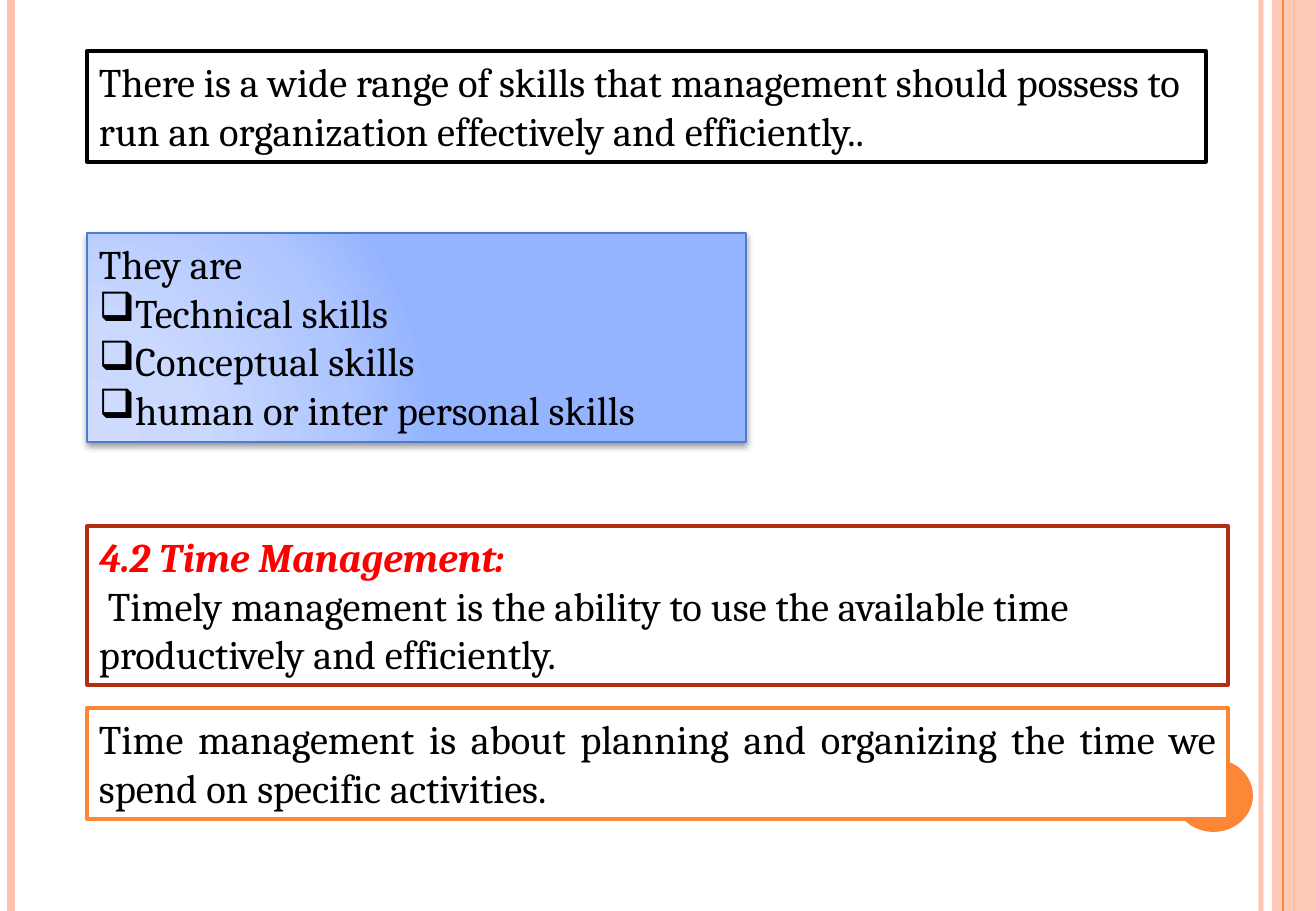
"""Build a slide on management skills and time management."""
from pptx import Presentation
from pptx.dml.color import RGBColor
from pptx.enum.shapes import MSO_CONNECTOR, MSO_SHAPE
from pptx.enum.text import MSO_ANCHOR, PP_ALIGN
from pptx.oxml import parse_xml
from pptx.oxml.ns import qn
from pptx.util import Emu, Pt
from lxml import etree

STRAIGHT = MSO_CONNECTOR.STRAIGHT
RECTANGLE, OVAL = MSO_SHAPE.RECTANGLE, MSO_SHAPE.OVAL
LEFT, JUSTIFY = PP_ALIGN.LEFT, PP_ALIGN.JUSTIFY
TOP = MSO_ANCHOR.TOP

PX = 7526
WIDTH, HEIGHT = 1316, 911
BOX_LEFT = 87
NAMESPACE = 'xmlns:a="http://schemas.openxmlformats.org/drawingml/2006/main"'
BULLET = "❑"
ORANGE, PEACH, BLACK, WHITE = "FE8637", "FEC3AE", "000000", "FFFFFF"

BODY = {"size": Pt(24), "name": "Cambria", "bold": False, "italic": False}
HEADING = {**BODY, "bold": True, "italic": True}

BACK_STRIPES = [(1261, PEACH, 3, 93), (11, PEACH, 4.5, 100), (1294, ORANGE, 1.5, 100)]
FRONT_STRIPES = [(1283, ORANGE, 0.75, 100)]
BAND = (1272, 0, 44, HEIGHT)
DOT = (1174, 759, 79, 73)

GRADIENT_STOPS = [(0, "CFDCFF"), (30, "CBD9FF"), (75, "AFC6FF"), (100, "95B4FF")]
GRADIENT_CENTRE = {"l": 5, "t": 100, "r": 120, "b": 10}

BOXES = [
    {"top": 51, "width": 1119, "height": 111, "line": (BLACK, 2), "text": [
        ("There is a wide range of skills that management should possess to "
         "run an organization effectively and efficiently..", BODY, BLACK)]},
    {"top": 233, "width": 659, "height": 209, "line": ("4F7CCF", 1), "glow": True,
     "text": [("They are", BODY, BLACK)],
     "bullets": ["Technical skills", "Conceptual skills",
                 "human or inter personal skills"]},
    {"top": 526, "width": 1141, "height": 159, "line": ("B32C16", 2), "text": [
        ("4.2 Time Management:", HEADING, "FF0000"),
        (" Timely management is the ability to use the available time "
         "productively and efficiently.", BODY, BLACK)]},
    {"top": 708, "width": 1141, "height": 111, "line": (ORANGE, 2),
     "align": JUSTIFY, "text": [
        ("Time management is about planning and organizing the time we "
         "spend on specific activities.", BODY, BLACK)]},
]


def colour(value):
    return RGBColor.from_string(value)


def set_opacity(element, percent):
    if percent < 100:
        tint = next(element.iter(qn("a:srgbClr")))
        etree.SubElement(tint, qn("a:alpha"), val=str(percent * 1000))


def add_stripe(slide, x, tint, weight, opacity):
    ends = [Emu(value * PX) for value in (x, 0, x, HEIGHT)]
    stripe = slide.shapes.add_connector(STRAIGHT, *ends)
    stripe.line.color.rgb = colour(tint)
    stripe.line.width = Pt(weight)
    properties = stripe._element.spPr
    set_opacity(properties, opacity)
    etree.SubElement(properties, qn("a:effectLst"))


def add_block(slide, kind, place, fill, line=None):
    shape = slide.shapes.add_shape(kind, *[Emu(value * PX) for value in place])
    shape.shadow.inherit = False
    shape.fill.solid()
    shape.fill.fore_color.rgb = colour(fill)
    if line:
        shape.line.color.rgb = colour(line[0])
        shape.line.width = Pt(line[1])
    else:
        shape.line.fill.background()
    return shape


def add_glow(shape):
    stops = "".join(f'<a:gs pos="{place * 1000}"><a:srgbClr val="{tint}"/></a:gs>'
                    for place, tint in GRADIENT_STOPS)
    centre = " ".join(f'{side}="{value * 1000}"' for side, value in GRADIENT_CENTRE.items())
    properties = shape._element.spPr
    properties.replace(properties.find(qn("a:solidFill")), parse_xml(
        f'<a:gradFill {NAMESPACE}><a:gsLst>{stops}</a:gsLst>'
        f'<a:path path="circle"><a:fillToRect {centre}/></a:path></a:gradFill>'))
    properties.find(qn("a:effectLst")).append(parse_xml(
        f'<a:outerShdw {NAMESPACE} blurRad="{Pt(4)}" dist="{Pt(2)}" dir="5400000" '
        f'rotWithShape="0"><a:srgbClr val="{BLACK}"><a:alpha val="40000"/>'
        '</a:srgbClr></a:outerShdw>'))


def add_text_box(slide, box):
    place = (BOX_LEFT, box["top"], box["width"], box["height"])
    shape = add_block(slide, RECTANGLE, place, WHITE, box["line"])
    if box.get("glow"):
        add_glow(shape)
    frame = shape.text_frame
    frame.word_wrap = True
    frame.vertical_anchor = TOP
    lines = [(*line, False) for line in box["text"]]
    lines += [(text, BODY, BLACK, True) for text in box.get("bullets", [])]
    for index, (text, style, tint, bulleted) in enumerate(lines):
        paragraph = frame.add_paragraph() if index else frame.paragraphs[0]
        paragraph.alignment = box.get("align", LEFT)
        if bulleted:
            etree.SubElement(paragraph._p.get_or_add_pPr(), qn("a:buChar"), char=BULLET)
        run = paragraph.add_run()
        run.text = text
        for name, value in style.items():
            setattr(run.font, name, value)
        run.font.color.rgb = colour(tint)


def main():
    presentation = Presentation()
    presentation.slide_width = Emu(WIDTH * PX)
    presentation.slide_height = Emu(HEIGHT * PX)
    slide = presentation.slides.add_slide(presentation.slide_layouts[6])
    for stripe in BACK_STRIPES:
        add_stripe(slide, *stripe)
    band = add_block(slide, RECTANGLE, BAND, PEACH)
    set_opacity(band._element.spPr, 87)
    for stripe in FRONT_STRIPES:
        add_stripe(slide, *stripe)
    add_block(slide, OVAL, DOT, ORANGE)
    for box in BOXES:
        add_text_box(slide, box)
    presentation.save("out.pptx")


if __name__ == "__main__":
    main()
